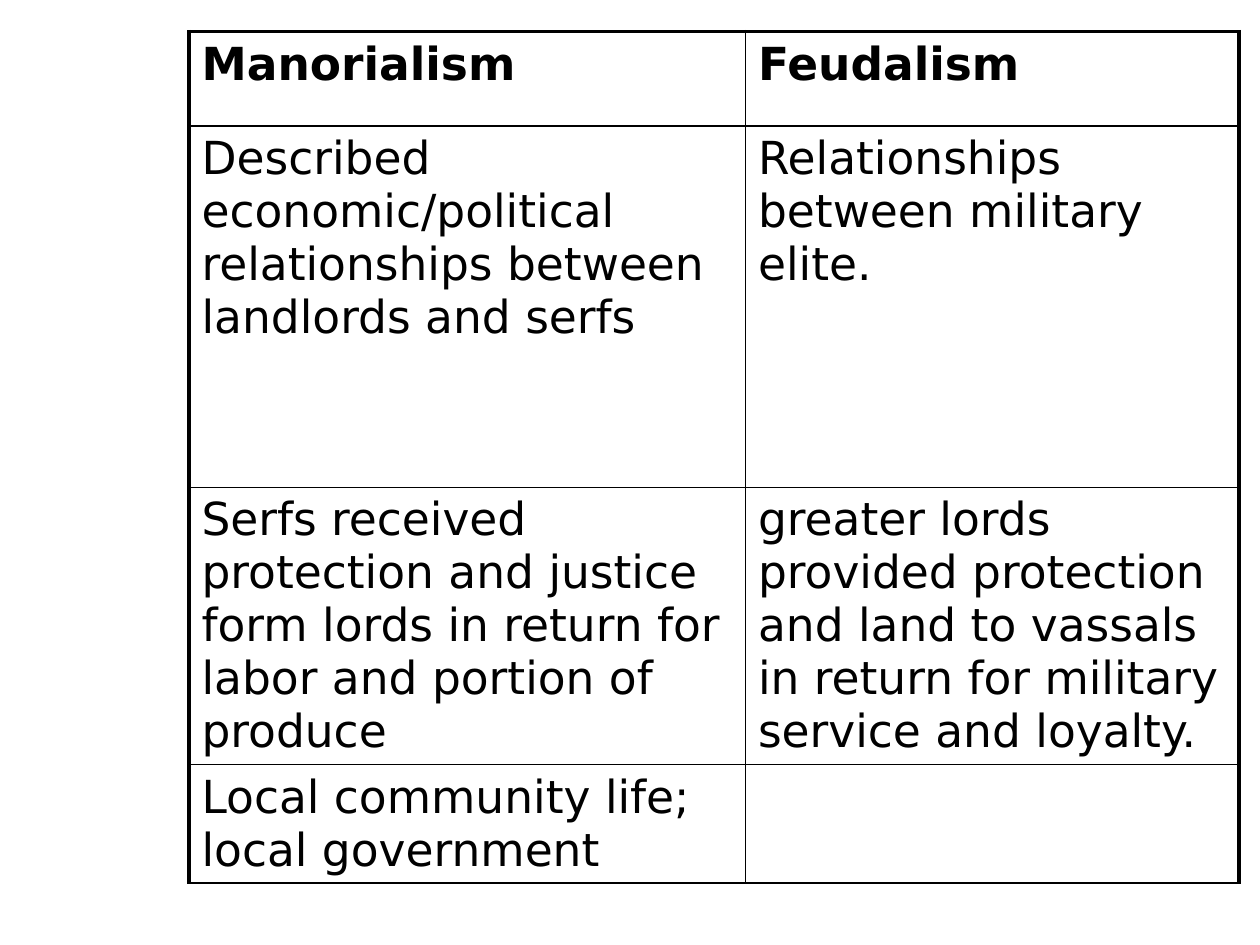
from dataclasses import dataclass

import pptx
import pptx.dml.color
import pptx.oxml.ns
import pptx.util
from lxml import etree

FONT = "DejaVu Sans"
BLACK = "000000"
THIN, THICK = 1, 2.25
LEFT, TOP = 108, 18
COLUMN_WIDTHS = (318, 282)


@dataclass
class ComparisonRow:
    height: float
    manorialism: str
    feudalism: str
    bold: bool = False


ROWS = [
    ComparisonRow(54, "Manorialism", "Feudalism", bold=True),
    ComparisonRow(
        206.5,
        "Described economic/political relationships between landlords and serfs",
        "Relationships between military elite.",
    ),
    ComparisonRow(
        150,
        "Serfs received protection and justice form lords in return for labor and portion of produce",
        "greater lords provided protection and land to vassals in return for military service and loyalty.",
    ),
    ComparisonRow(64, "Local community life; local government", ""),
]


def colour(hex_value: str) -> pptx.dml.color.RGBColor:
    return pptx.dml.color.RGBColor.from_string(hex_value)


def write_text(frame, text: str, *, size: float = 26, bold: bool = False, ink: str = BLACK) -> None:
    para = frame.paragraphs[0]
    para.font.size = pptx.util.Pt(size)
    if not text:
        return
    span = para.add_run()
    span.text = text
    span.font.name = FONT
    span.font.size = pptx.util.Pt(size)
    span.font.bold = bold
    span.font.color.rgb = colour(ink)


def set_borders(cell, widths: dict[str, float]) -> None:
    """Draw the cell's sides, keyed L, R, T and B in the order the schema asks for."""
    properties = cell._tc.get_or_add_tcPr()
    qn = pptx.oxml.ns.qn
    for side, width in widths.items():
        line = etree.SubElement(properties, qn(f"a:ln{side}"), w=str(int(pptx.util.Pt(width))))
        fill = etree.SubElement(line, qn("a:solidFill"))
        etree.SubElement(fill, qn("a:srgbClr"), val=BLACK)


def add_comparison_table(page, rows: list[ComparisonRow]) -> None:
    frame = page.shapes.add_table(
        len(rows),
        len(COLUMN_WIDTHS),
        pptx.util.Pt(LEFT),
        pptx.util.Pt(TOP),
        pptx.util.Pt(sum(COLUMN_WIDTHS)),
        pptx.util.Pt(sum(row.height for row in rows)),
    )
    table = frame.table
    table.first_row = False
    table.horz_banding = False
    for column, width in zip(table.columns, COLUMN_WIDTHS):
        column.width = pptx.util.Pt(width)

    last_column = len(COLUMN_WIDTHS) - 1
    for row_index, row in enumerate(rows):
        table.rows[row_index].height = pptx.util.Pt(row.height)
        for column_index, text in enumerate((row.manorialism, row.feudalism)):
            cell = table.cell(row_index, column_index)
            write_text(cell.text_frame, text, bold=row.bold)
            set_borders(cell, {
                "L": THICK if column_index == 0 else THIN,
                "R": THICK if column_index == last_column else THIN,
                "T": THICK if row_index == 0 else THIN,
                "B": THIN,
            })
            cell.fill.background()


def main() -> None:
    deck = pptx.Presentation()
    deck.slide_width = pptx.util.Pt(720)
    deck.slide_height = pptx.util.Pt(540)
    page = deck.slides.add_slide(deck.slide_layouts[6])
    add_comparison_table(page, ROWS)
    deck.save("out.pptx")


if __name__ == "__main__":
    main()
